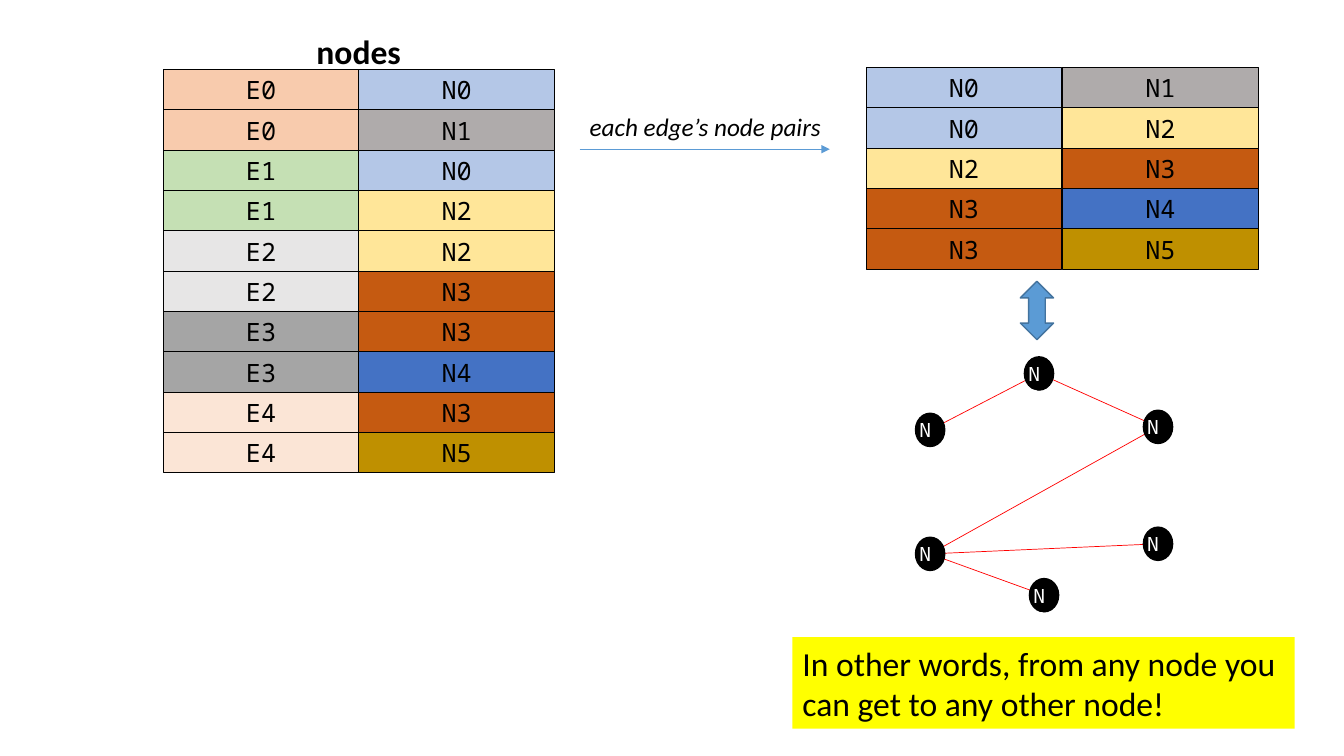
"""Builds a slide that turns an edge and node table into node pairs and a graph."""
import lxml.etree
import pptx
import pptx.dml.color
import pptx.enum.shapes
import pptx.enum.text
import pptx.oxml.ns
import pptx.util

Inches = pptx.util.Inches
Shape = pptx.enum.shapes.MSO_SHAPE
Align = pptx.enum.text.PP_ALIGN
Anchor = pptx.enum.text.MSO_ANCHOR

THEME = {
    "sans": "Calibri", "mono": "Noto Sans Mono",
    "big": 24, "mid": 18, "small": 14,
    "black": "000000", "white": "FFFFFF", "red": "FF0000",
    "yellow": "FFFF00", "blue": "5B9BD5", "navy": "43739E",
    "E0": "F8CBAD", "E1": "C5E0B4", "E2": "E7E6E6", "E3": "A5A5A5", "E4": "FBE5D6",
    "N0": "B4C7E7", "N1": "AFABAB", "N2": "FFE699", "N3": "C55A11", "N4": "4472C4",
    "N5": "BF9000",
}
PAIRS = [("N0", "N1"), ("N0", "N2"), ("N2", "N3"), ("N3", "N4"), ("N3", "N5")]
ROWS = [(f"E{num}", node) for num, pair in enumerate(PAIRS) for node in pair]
GRIDS = [
    (1.62, 0.69, 1.94, ROWS),
    (8.59, 0.67, 1.95, PAIRS),
]
CELL = (1.94, 0.4)
NODES = {
    "N0": (10.16, 3.54), "N1": (9.08, 4.1), "N2": (11.34, 4.07),
    "N3": (9.08, 5.33), "N4": (11.34, 5.23), "N5": (10.21, 5.74),
}
DOT = (0.29, 0.33)
HEAD = "nodes"
STEP = "each edge’s node pairs"
CLAIM = "In other words, from any node you can get to any other node!"


def tint(name):
    return pptx.dml.color.RGBColor.from_string(THEME[name])


def write(shape, text, size, face="mono", color="black", align=Align.LEFT,
          bold=False, slant=False):
    frame = shape.text_frame
    frame.text = text
    para = frame.paragraphs[0]
    para.alignment = align
    font = para.runs[0].font
    font.name, font.size = THEME[face], pptx.util.Pt(THEME[size])
    font.bold, font.italic = bold, slant
    font.color.rgb = tint(color)


def draw(slide, kind, box, fill, edge=None, width=1):
    shape = slide.shapes.add_shape(kind, *map(Inches, box))
    shape.shadow.inherit = False
    shape.fill.solid()
    shape.fill.fore_color.rgb = tint(fill)
    if edge:
        shape.line.color.rgb = tint(edge)
        shape.line.width = pptx.util.Pt(width)
    else:
        shape.line.fill.background()
    shape.text_frame.word_wrap = True
    shape.text_frame.vertical_anchor = Anchor.MIDDLE
    return shape


def label(slide, box, text, size, **style):
    shape = slide.shapes.add_textbox(*map(Inches, box))
    shape.text_frame.word_wrap = False
    write(shape, text, size, **style)


def link(slide, start, end, color, tip=None):
    line = slide.shapes.add_connector(
        pptx.enum.shapes.MSO_CONNECTOR.STRAIGHT, *map(Inches, (*start, *end)))
    line.line.color.rgb = tint(color)
    line.line.width = pptx.util.Pt(0.5)
    qn = pptx.oxml.ns.qn
    props = line.element.spPr
    lxml.etree.SubElement(props, qn("a:effectLst"))
    if tip:
        lxml.etree.SubElement(props.find(qn("a:ln")), qn("a:tailEnd"), type=tip)


def add_grid(slide, left, top, pitch, rows):
    for row, names in enumerate(rows):
        for col, name in enumerate(names):
            box = (left + col * pitch, top + row * CELL[1], *CELL)
            cell = draw(slide, Shape.RECTANGLE, box, name, "black", 0.75)
            write(cell, name, "mid", align=Align.CENTER)


def add_graph(slide):
    mids = {name: (x + DOT[0] / 2, y + DOT[1] / 2) for name, (x, y) in NODES.items()}
    for start, end in PAIRS:
        link(slide, mids[start], mids[end], "red")
    for name, (x, y) in NODES.items():
        draw(slide, Shape.OVAL, (x, y, *DOT), "black", "black")
        label(slide, (x - 0.06, y, 0.42, 0.34), name, "small", color="white")


def main():
    deck = pptx.Presentation()
    deck.slide_width, deck.slide_height = Inches(13.33), Inches(7.5)
    slide = deck.slides.add_slide(deck.slide_layouts[6])
    add_graph(slide)
    claim = draw(slide, Shape.RECTANGLE, (7.86, 6.32, 4.98, 0.91), "yellow")
    write(claim, CLAIM, "big", face="sans")
    label(slide, (3.04, 0.26, 1.05, 0.5), HEAD, "big", face="sans", bold=True)
    for grid in GRIDS:
        add_grid(slide, *grid)
    link(slide, (5.75, 1.48), (8.23, 1.48), "blue", "triangle")
    label(slide, (5.75, 1.06, 2.52, 0.4), STEP, "mid", face="sans", slant=True)
    draw(slide, Shape.UP_DOWN_ARROW, (10.12, 2.79, 0.33, 0.58), "blue", "navy")
    deck.save("out.pptx")


if __name__ == "__main__":
    main()
